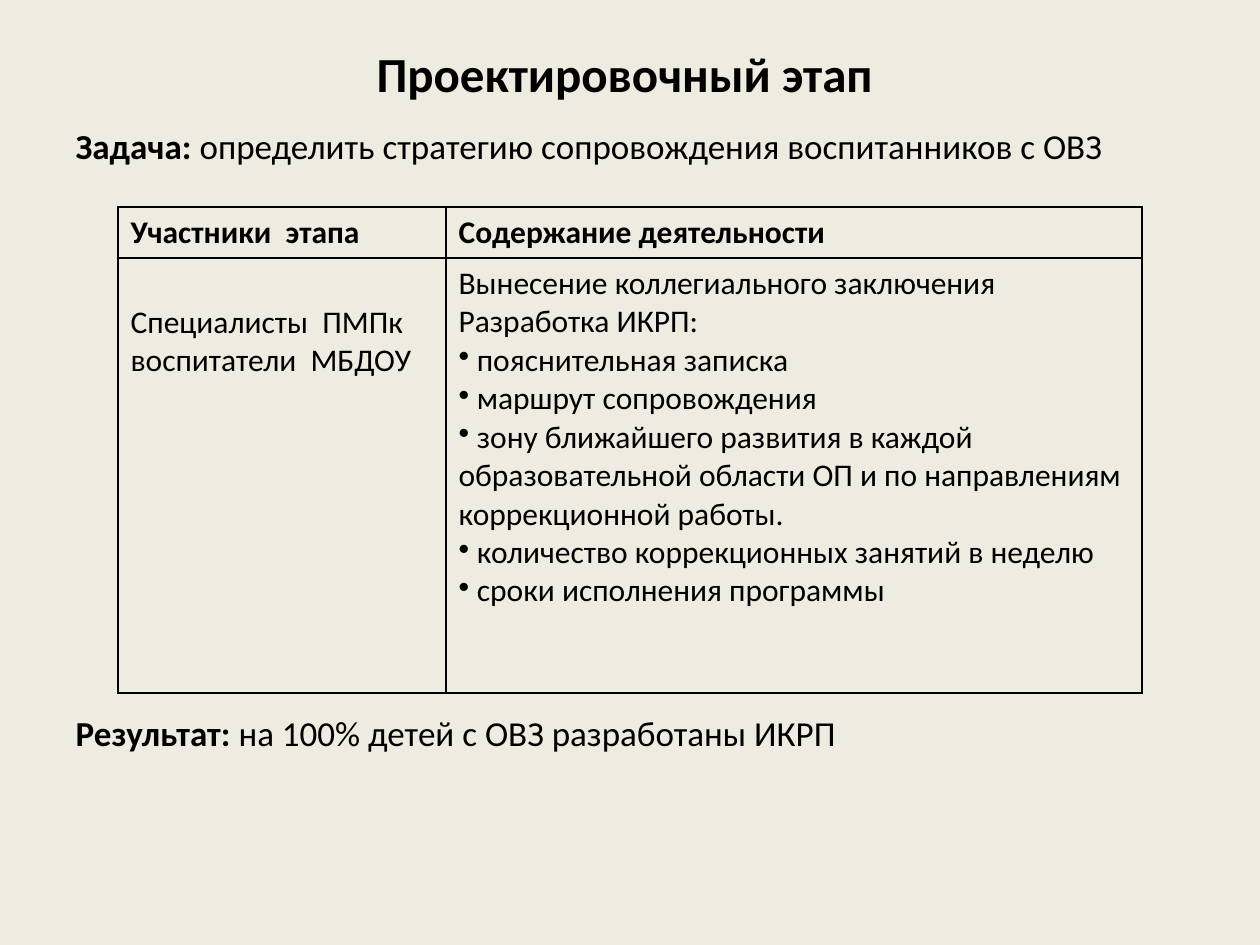
"""Build the slide on the planning stage of support for children."""
from dataclasses import dataclass

from lxml.etree import SubElement
from pptx import Presentation
from pptx.dml.color import RGBColor
from pptx.enum.text import MSO_ANCHOR, MSO_AUTO_SIZE, PP_ALIGN
from pptx.oxml import parse_xml
from pptx.oxml.ns import nsdecls, qn
from pptx.util import Emu, Pt


@dataclass(frozen=True)
class Theme:
    font: str = "Calibri"
    ink: str = "000000"
    paper: str = "EEECE1"
    title: int = 28
    body: int = 20
    table: int = 18


theme = Theme()


def px(count):
    return Emu(round(count * 914400 / 126))


def add_run(paragraph, text, size, bold=False):
    run = paragraph.add_run()
    run.text = text
    run.font.name = theme.font
    run.font.size = Pt(size)
    run.font.bold = bold
    run.font.color.rgb = RGBColor.from_string(theme.ink)


prs = Presentation()
prs.slide_width, prs.slide_height = px(1260), px(945)
slide = prs.slides.add_slide(prs.slide_layouts[1])
slide.background.fill.solid()
slide.background.fill.fore_color.rgb = RGBColor.from_string(theme.paper)

heading = slide.shapes.title
summary = slide.placeholders[1]
for placeholder, top, height in ((heading, 38, 70), (summary, 118, 726)):
    placeholder.left, placeholder.top = px(63), px(top)
    placeholder.width, placeholder.height = px(1134), px(height)
    placeholder.text_frame.word_wrap = True
    placeholder.text_frame.auto_size = MSO_AUTO_SIZE.NONE

heading.text_frame.vertical_anchor = MSO_ANCHOR.MIDDLE
heading_line = heading.text_frame.paragraphs[0]
heading_line.alignment = PP_ALIGN.CENTER
add_run(heading_line, "Проектировочный этап ", theme.title, True)

task = summary.text_frame.paragraphs[0]
result = summary.text_frame.add_paragraph()
result.space_before = px(545)
for statement, label, wording in (
    (task, "Задача: ", "определить стратегию сопровождения воспитанников с ОВЗ"),
    (result, "Результат: ", "на 100% детей с ОВЗ разработаны ИКРП"),
):
    SubElement(statement._p.get_or_add_pPr(), qn("a:buNone"))
    add_run(statement, label, theme.body, True)
    add_run(statement, wording, theme.body)

stage_rows = [
    [["Участники  этапа"], ["Содержание деятельности"]],
    [
        ["Специалисты  ПМПк воспитатели  МБДОУ"],
        [
            "Вынесение коллегиального заключения",
            "Разработка ИКРП:",
            "• пояснительная записка",
            "• маршрут сопровождения",
            "• зону ближайшего развития в каждой образовательной области ОП "
            "и по направлениям коррекционной работы.",
            "• количество коррекционных занятий в неделю",
            "• сроки исполнения программы",
        ],
    ],
]
column_widths = (328, 696)
row_heights = (51, 435)
stages = slide.shapes.add_table(
    2, 2, px(118), px(207), px(sum(column_widths)), px(sum(row_heights))
).table
for column, width in zip(stages.columns, column_widths):
    column.width = px(width)

for row_index, (row, height) in enumerate(zip(stage_rows, row_heights)):
    stages.rows[row_index].height = px(height)
    for column_index, lines in enumerate(row):
        cell = stages.cell(row_index, column_index)
        for line_index, line in enumerate(lines):
            if line_index:
                entry = cell.text_frame.add_paragraph()
            else:
                entry = cell.text_frame.paragraphs[0]
            if line.startswith("•"):
                SubElement(entry._p.get_or_add_pPr(), qn("a:buChar")).set("char", "•")
            add_run(entry, line.removeprefix("•"), theme.table, row_index == 0)
        properties = cell._tc.get_or_add_tcPr()
        for side in ("lnL", "lnR", "lnT", "lnB"):
            properties.append(parse_xml(
                f'<a:{side} {nsdecls("a")} w="{Pt(1)}"><a:solidFill>'
                f'<a:srgbClr val="{theme.ink}"/></a:solidFill></a:{side}>'
            ))
        cell.fill.background()
stages.cell(1, 0).margin_top = px(45)

prs.save("out.pptx")
